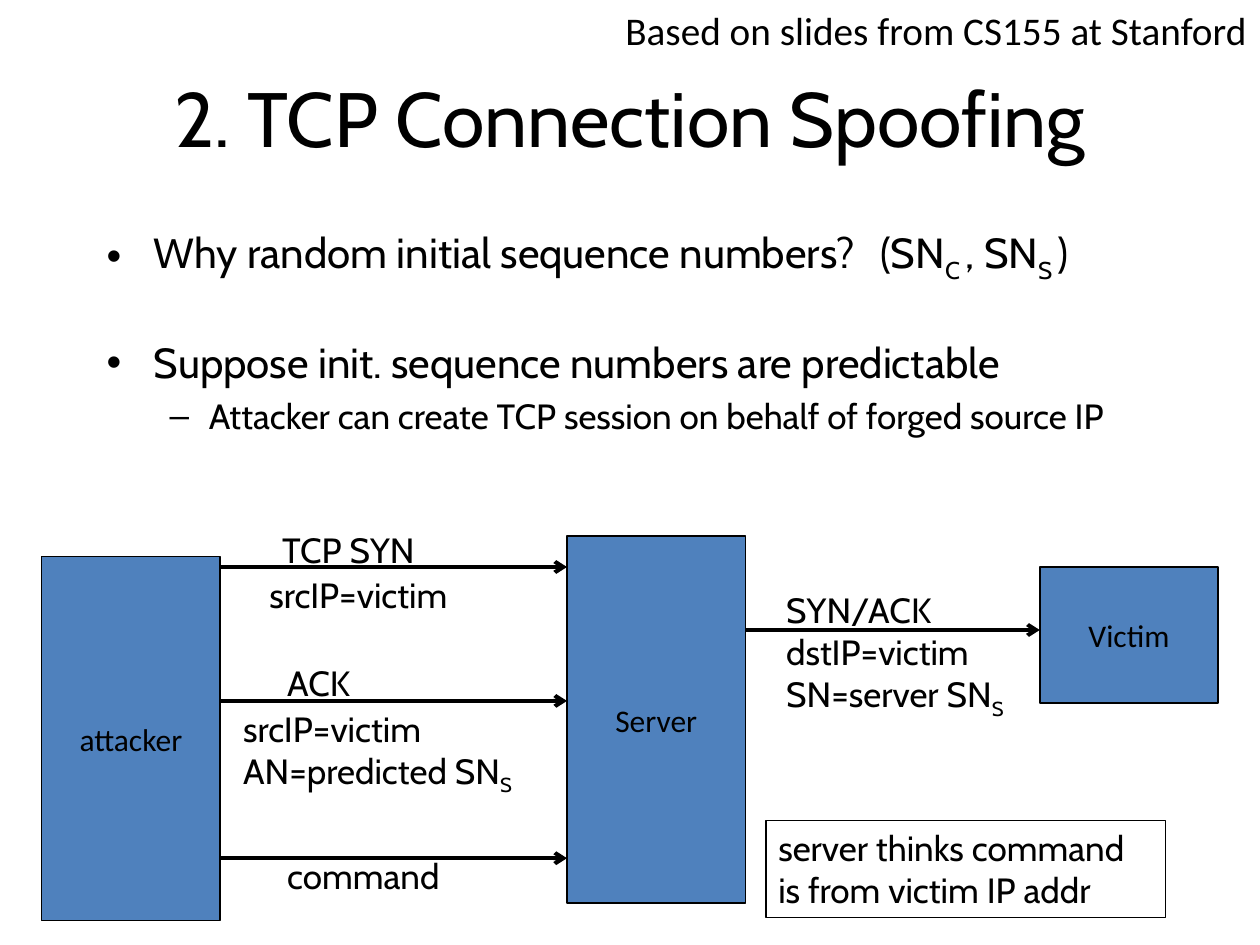
from lxml.etree import SubElement
from pptx import Presentation
from pptx.dml.color import RGBColor
from pptx.enum.shapes import MSO_CONNECTOR, MSO_SHAPE
from pptx.enum.text import MSO_ANCHOR, PP_ALIGN
from pptx.oxml.ns import qn
from pptx.util import Cm, Pt

BLACK = RGBColor(0, 0, 0)
BLUE = RGBColor(0x4F, 0x81, 0xBD)

CABIN = {"name": "Cabin", "size": Pt(20)}
TITLE_FONT = {"name": "Cabin", "size": Pt(44)}
CREDIT_FONT = {"name": "Calibri", "size": Pt(22.4)}
HOST_FONT = {"name": "Calibri", "size": Pt(18)}

TITLE = "2. TCP Connection Spoofing"
CREDIT = "Based on slides from CS155 at Stanford"

# fmt: text, size, bullet, level, space before, left margin, hanging indent
BULLETS = [
    ("Why random initial sequence numbers?\t(SN|C |, SN|S |)", 24, "•", 0, 5, 0.95, 0.95),
    ("Suppose init. sequence numbers are predictable", 24, "•", 0, 30, 0.95, 0.95),
    ("Attacker can create TCP session on behalf of forged source IP", 20, "–", 1, 4, 2.06, 0.79),
]
TAB_STOP = 15.6

HOST_WIDTH = 3.6
HOSTS = {
    "attacker": (0.84, 11.22, 7.34),
    "Server": (11.43, 10.8, 7.41),
    "Victim": (20.96, 11.43, 2.75),
}

MESSAGES = [
    ("attacker", "Server", 11.43, [
        (["TCP SYN"], 5.44, 10.52, 3.23, 1.11),
        (["srcIP=victim"], 5.18, 11.43, 4.45, 1.11),
    ]),
    ("attacker", "Server", 14.13, [
        (["ACK"], 5.54, 13.21, 1.78, 1.11),
        (["srcIP=victim", "AN=predicted SN|S"], 4.65, 14.13, 6.32, 1.96),
    ]),
    ("attacker", "Server", 17.3, [
        (["command"], 5.54, 17.1, 3.58, 1.11),
    ]),
    ("Server", "Victim", 12.7, [
        (["SYN/ACK\vdstIP=victim", "SN=server SN|S"], 15.6, 11.74, 5.33, 2.82),
    ]),
]

NOTE = "server thinks command\vis from victim IP addr"


def apply(target, values):
    for key, value in values.items():
        setattr(target, key, value)


def write(p, text, font):
    for i, part in enumerate(text.split("|")):
        for j, line in enumerate(part.split("\v")):
            if j:
                p.add_line_break()
            r = p.add_run()
            r.text = line
            apply(r.font, font)
            r.font.color.rgb = BLACK
            if i % 2:
                r._r.get_or_add_rPr().set("baseline", "-25000")


def add_text(shapes, lines, box, font, align=PP_ALIGN.LEFT, **frame):
    tf = shapes.add_textbox(*map(Cm, box)).text_frame
    apply(tf, {"word_wrap": True, **frame})
    for i, line in enumerate(lines):
        p = tf.add_paragraph() if i else tf.paragraphs[0]
        p.alignment = align
        write(p, line, font)
    return tf


def add_box(shapes, text, box, font, fill, width, align, anchor):
    sp = shapes.add_shape(MSO_SHAPE.RECTANGLE, *map(Cm, box))
    sp.shadow.inherit = False
    if fill is None:
        sp.fill.background()
    else:
        sp.fill.solid()
        sp.fill.fore_color.rgb = fill
    sp.line.color.rgb = BLACK
    sp.line.width = Pt(width)
    apply(sp.text_frame, {"word_wrap": True, "vertical_anchor": anchor})
    p = sp.text_frame.paragraphs[0]
    p.alignment = align
    write(p, text, font)


def add_arrow(shapes, x1, x2, y):
    line = shapes.add_connector(MSO_CONNECTOR.STRAIGHT, Cm(x1), Cm(y), Cm(x2), Cm(y))
    line.line.color.rgb = BLACK
    line.line.width = Pt(2.25)
    SubElement(line.line._get_or_add_ln(), qn("a:tailEnd"), type="arrow")
    SubElement(line._element.spPr, qn("a:effectLst"))


def add_bullets(shapes):
    tf = add_text(shapes, [], (1.9, 4.45, 22.66, 13.77), CABIN)
    for i, (text, size, mark, level, before, margin, hang) in enumerate(BULLETS):
        p = tf.add_paragraph() if i else tf.paragraphs[0]
        apply(p, {"level": level, "space_before": Pt(before)})
        pPr = p._p.get_or_add_pPr()
        pPr.set("marL", str(Cm(margin)))
        pPr.set("indent", str(-Cm(hang)))
        SubElement(pPr, qn("a:buFont"), typeface="Arial")
        SubElement(pPr, qn("a:buChar"), char=mark)
        if "\t" in text:
            tabs = SubElement(pPr, qn("a:tabLst"))
            SubElement(tabs, qn("a:tab"), pos=str(Cm(TAB_STOP)), algn="l")
        write(p, text, {**CABIN, "size": Pt(size)})


def main():
    prs = Presentation()
    prs.slide_width, prs.slide_height = Cm(25.4), Cm(19.05)
    s = prs.slides.add_slide(prs.slide_layouts[6])

    add_text(s.shapes, [TITLE], (1.27, 0.76, 22.86, 3.18), TITLE_FONT,
             PP_ALIGN.CENTER, vertical_anchor=MSO_ANCHOR.MIDDLE)
    add_bullets(s.shapes)

    for name, (x, y, height) in HOSTS.items():
        add_box(s.shapes, name, (x, y, HOST_WIDTH, height), HOST_FONT, BLUE, 1,
                PP_ALIGN.CENTER, MSO_ANCHOR.MIDDLE)

    for sender, receiver, y, labels in MESSAGES:
        group = s.shapes.add_group_shape()
        add_arrow(group.shapes, HOSTS[sender][0] + HOST_WIDTH, HOSTS[receiver][0], y)
        for lines, *box in labels:
            add_text(group.shapes, lines, box, CABIN, word_wrap=False)

    add_box(s.shapes, NOTE, (15.44, 16.54, 8.05, 1.96), CABIN, None, 0.75,
            PP_ALIGN.LEFT, MSO_ANCHOR.TOP)
    add_text(s.shapes, [CREDIT], (0, 0, 25.4, 1.07), CREDIT_FONT, PP_ALIGN.RIGHT)
    prs.save("out.pptx")


if __name__ == "__main__":
    main()
